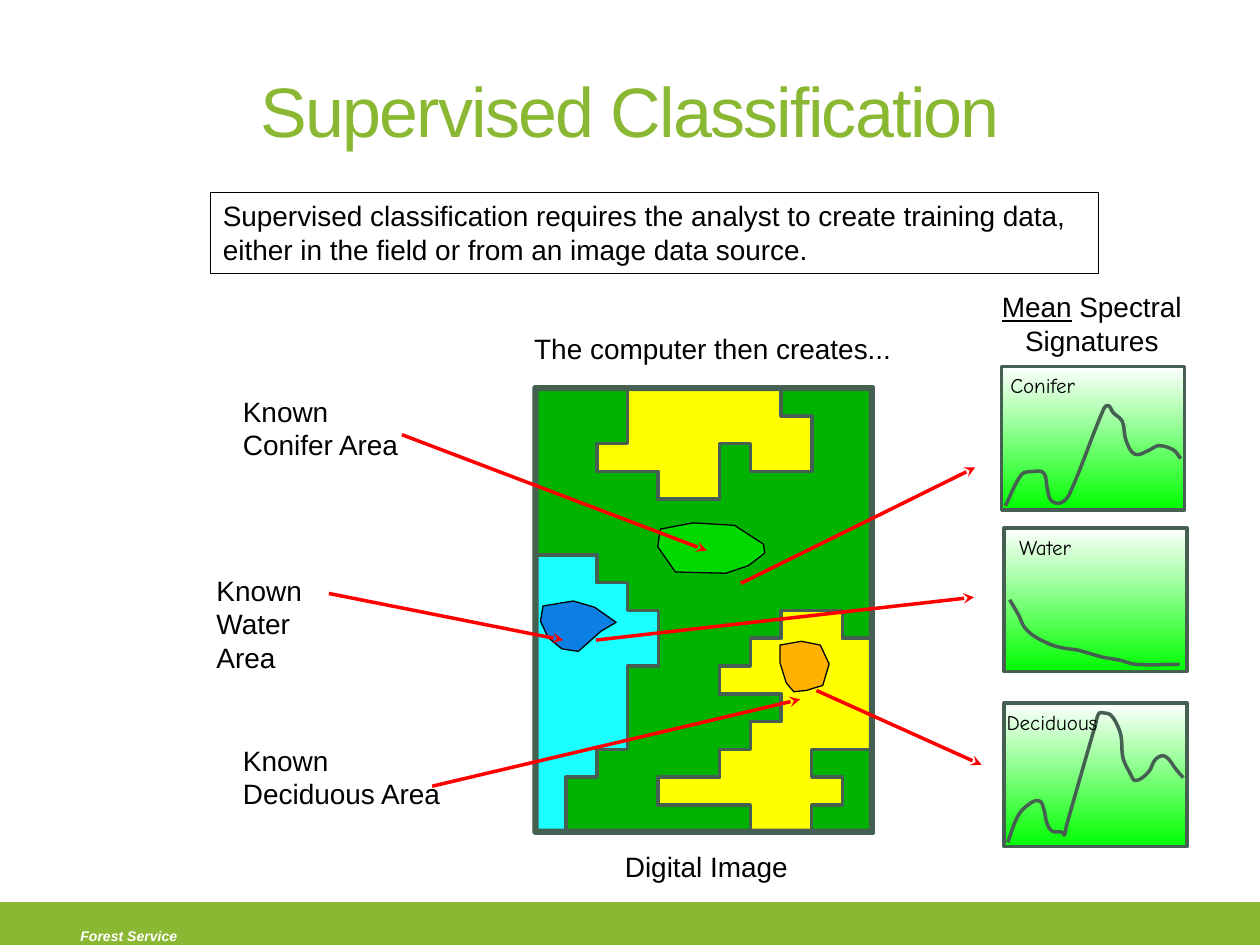
from dataclasses import dataclass
from math import dist

from lxml import etree
from pptx import Presentation
from pptx.dml.color import RGBColor
from pptx.enum.shapes import MSO_CONNECTOR, MSO_SHAPE
from pptx.enum.text import MSO_ANCHOR, PP_ALIGN
from pptx.oxml.ns import qn
from pptx.util import Emu, Inches, Pt

RECT, STRAIGHT = MSO_SHAPE.RECTANGLE, MSO_CONNECTOR.STRAIGHT
LEFT, CENTER = PP_ALIGN.LEFT, PP_ALIGN.CENTER
TOP, MIDDLE = MSO_ANCHOR.TOP, MSO_ANCHOR.MIDDLE
SLIDE_W, SLIDE_H = Inches(10), Inches(7.5)
UNIT = SLIDE_W / 100  # the slide is a grid of 100 columns by 75 rows


@dataclass(frozen=True)
class Theme:
    brand: str = "8AB833"
    edge: str = "455F51"
    ink: str = "000000"
    paper: str = "FFFFFF"
    arrow: str = "FF0000"
    forest: str = "00B300"
    water: str = "1AFFFF"
    leaf: str = "FFFF00"
    glow: str = "00FF00"
    font: str = "Arial"
    label_font: str = "Comic Neue"
    title: int = 40
    body: int = 16
    label: int = 12
    footer: int = 8
    thick: float = 2
    thin: float = 0.75


T = Theme()

# Land cover, as corners on an 11 by 16 cell raster
MAP = (42.5, 30.8, 26.8, 35.3)
MAP_COLS, MAP_ROWS = 11, 16
COVER = [
    (T.water, [(0, 6), (2, 6), (2, 7), (3, 7), (3, 8), (4, 8), (4, 10), (3, 10), (3, 13),
               (2, 13), (2, 14), (1, 14), (1, 16), (0, 16)]),
    (T.leaf, [(3, 0), (3, 2), (2, 2), (2, 3), (4, 3), (4, 4), (6, 4), (6, 2), (7, 2),
              (7, 3), (9, 3), (9, 1), (8, 1), (8, 0)]),
    (T.leaf, [(11, 9), (10, 9), (10, 8), (8, 8), (8, 9), (7, 9), (7, 10), (6, 10), (6, 11),
              (8, 11), (8, 12), (7, 12), (7, 13), (6, 13), (6, 14), (4, 14), (4, 15), (7, 15),
              (7, 16), (9, 16), (9, 15), (10, 15), (10, 14), (9, 14), (9, 13), (11, 13)]),
]
FRAME = [
    [(42.5, 65.9), (69.1, 65.9), (69.1, 30.9), (42.5, 30.9), (42.5, 30.7), (69.3, 30.7),
     (69.3, 66.1), (42.4, 66.1), (42.4, 66)],
    [(42.6, 30.8), (42.6, 66), (42.4, 66), (42.4, 30.7), (42.5, 30.7)],
]
# Training areas: colour, outline, label, label box, arrow start, arrow end
TRAINING = [
    ("FF6600", [(65.8, 52.7), (65.1, 51.2), (63.6, 50.9), (61.9, 51.2), (61.9, 52.6),
                (62.4, 54.2), (63, 54.9), (64, 54.8), (65.3, 54.4)],
     "Known Deciduous Area", (18.3, 58.5, 17.8, 6.4), (34.3, 62.4), (63.5, 55.5)),
    ("0000CC", [(48.9, 49.4), (47.2, 48.2), (45.5, 47.7), (43.1, 48.1), (42.9, 49.3),
                (43.5, 50.6), (44.6, 51.5), (45.9, 51.7), (47.7, 50.1)],
     "Known Water Area", (16.2, 45, 9.6, 9.1), (26.1, 47.1), (44.7, 50.8)),
    (T.glow, [(60.6, 43.2), (58.3, 41.7), (55, 41.5), (52.4, 42), (52.2, 43.4),
              (53.6, 45.4), (57.6, 45.5), (59.4, 44.9), (60.7, 43.9)],
     "Known Conifer Area", (18.3, 30.8, 15.3, 6.4), (31.9, 34.5), (56.1, 43.7)),
]
# Signatures: label, label left, panel left and top, curve in percent of the panel, arrow
PANEL_W, PANEL_H = 14.5, 11.4
SIGNATURES = [
    ("Water", 79.9, 79.7, 41.9,
     [(3, 50), (8, 61), (11, 69), (16, 75), (25, 81), (30, 83), (34, 84), (40, 85),
      (54, 90), (63, 92), (72, 95), (96, 95)], (47.3, 50.8), (77.3, 47.4)),
    ("Conifer", 79.2, 79.5, 29.1,
     [(2, 97), (11, 75), (17, 73), (23, 74), (25, 85), (27, 93), (32, 95), (37, 89),
      (55, 32), (58, 27), (61, 32), (66, 38), (68, 51), (73, 61), (81, 58), (86, 55),
      (94, 58), (98, 64)], (58.8, 46.3), (77.4, 37.1)),
    ("Deciduous", 78.9, 79.7, 55.8,
     [(2, 97), (7, 80), (12, 72), (19, 68), (22, 75), (23, 82), (26, 89), (32, 90),
      (33, 92), (34, 86), (50, 15), (52, 7), (55, 7), (58, 8), (61, 13), (64, 23),
      (65, 38), (69, 49), (72, 54), (79, 48), (83, 39), (88, 37), (94, 46), (98, 52)],
     (64.8, 54.8), (77.9, 60.7)),
]


def grid(*values):
    return [Emu(round(v * UNIT)) for v in values]


def style(shape, fill=None, line=T.edge, width=T.thick, alpha=None):
    shape.shadow.inherit = False
    if fill:
        shape.fill.solid()
        shape.fill.fore_color.rgb = RGBColor.from_string(fill)
    else:
        shape.fill.background()
    if alpha:
        color = shape.fill._xPr.find(qn("a:solidFill"))[0]
        etree.SubElement(color, qn("a:alpha")).set("val", str(alpha * 1000))
    shape.line.color.rgb = RGBColor.from_string(line)
    shape.line.width = Pt(width)


def write(shape, *runs, align=LEFT, anchor=TOP, wrap=True, inset=None, **base):
    """Fill a shape with one paragraph of (text, font values) runs."""
    tf = shape.text_frame
    tf.word_wrap, tf.vertical_anchor = wrap, anchor
    if inset is not None:
        for side in ("left", "top", "right", "bottom"):
            setattr(tf, f"margin_{side}", inset)
    p = tf.paragraphs[0]
    p.alignment = align
    for text, extra in runs:
        r = p.add_run()
        r.text = text
        values = {"name": T.font, "size": T.body, "color": T.ink, **base, **extra}
        r.font.color.rgb = RGBColor.from_string(values.pop("color"))
        values["size"] = Pt(values["size"])
        for name, value in values.items():
            setattr(r.font, name, value)


def add_text(s, box, *runs, **options):
    write(s.shapes.add_textbox(*grid(*box)), *runs, **options)


def add_rect(s, box, **look):
    shape = s.shapes.add_shape(RECT, *grid(*box))
    style(shape, **look)
    return shape


def add_outline(s, points, close=True, **look):
    points = [grid(*point) for point in points]
    builder = s.shapes.build_freeform(*points[0], scale=1.0)
    builder.add_line_segments(points[1:], close=close)
    shape = builder.convert_to_shape()
    style(shape, **look)
    return shape


def add_curve(s, points):
    """Draw an open outline and round its segments into Bezier curves."""
    shape = add_outline(s, points, close=False)
    nodes = list(shape._element.iter(qn("a:pt")))
    pts = [(int(n.get("x")), int(n.get("y"))) for n in nodes]

    def handle(i, reach):
        before, after = pts[max(i - 1, 0)], pts[min(i + 1, len(pts) - 1)]
        scale = reach / dist(before, after)
        return [pts[i][k] + (after[k] - before[k]) * scale for k in (0, 1)]

    for i, node in enumerate(nodes[1:], 1):
        segment = node.getparent()
        curve = etree.Element(qn("a:cubicBezTo"))
        reach = dist(pts[i - 1], pts[i]) / 3
        for x, y in (handle(i - 1, reach), handle(i, -reach), pts[i]):
            etree.SubElement(curve, qn("a:pt"), x=str(round(x)), y=str(round(y)))
        segment.getparent().replace(segment, curve)


def add_arrow(s, start, end):
    arrow = s.shapes.add_connector(STRAIGHT, *grid(*start, *end))
    arrow.line.color.rgb = RGBColor.from_string(T.arrow)
    arrow.line.width = Pt(T.thick)
    etree.SubElement(arrow.line._get_or_add_ln(), qn("a:tailEnd")).set("type", "stealth")
    etree.SubElement(arrow._element.spPr, qn("a:effectLst"))


def add_title(s, text):
    title = s.shapes.title
    title.left, title.top, title.width, title.height = grid(5, 3.3, 90, 10.8)
    write(title, (text, {}), align=CENTER, anchor=MIDDLE, size=T.title, color=T.brand)
    title.text_frame.paragraphs[0].runs[0].font._element.set("spc", "-100")


def add_map(s):
    left, top, width, height = MAP
    add_rect(s, MAP, fill=T.forest)
    for color, cells in COVER:
        corners = [(left + c * width / MAP_COLS, top + r * height / MAP_ROWS) for c, r in cells]
        add_outline(s, corners, fill=color)
    for edge in FRAME:
        add_outline(s, edge, fill=T.ink)


def add_training_area(s, color, outline, label, box, start, end):
    add_outline(s, outline, fill=color, line=T.ink, width=T.thin, alpha=50)
    add_text(s, box, (label, {}))
    add_arrow(s, start, end)


def add_signature(s, label, label_left, left, top, curve, start, end):
    panel = add_rect(s, (left, top, PANEL_W, PANEL_H))
    panel.fill.gradient()
    panel.fill.gradient_angle = 270
    for stop, position, color in zip(panel.fill.gradient_stops, (0, 1), (T.paper, T.glow)):
        stop.position = position
        stop.color.rgb = RGBColor.from_string(color)
    add_curve(s, [(left + x * PANEL_W / 100, top + y * PANEL_H / 100) for x, y in curve])
    add_text(s, (label_left, top, 12.3, 3), (label, {}), name=T.label_font, size=T.label)
    add_arrow(s, start, end)


def main():
    prs = Presentation()
    prs.slide_width, prs.slide_height = SLIDE_W, SLIDE_H
    s = prs.slides.add_slide(prs.slide_layouts[5])
    add_rect(s, (0, 71.7, 100, 3.6), fill=T.brand, line=T.brand)
    add_text(s, (5.4, 73.1, 20.4, 2.4), ("Forest Service", {}),
             size=T.footer, color=T.paper, bold=True, italic=True)
    add_title(s, "Supervised Classification")
    add_map(s)
    add_text(s, (49.6, 67.4, 13.1, 2.7), ("Digital Image", {}), wrap=False, inset=0)
    summary = add_rect(s, (16.7, 15.3, 70.5, 6.4), line=T.ink, width=T.thin)
    write(summary, ("Supervised classification requires the analyst to create training data, "
                    "either in the field or from an image data source.", {}))
    add_text(s, (42.4, 26.3, 28.7, 2.7), ("The computer then creates...", {}), wrap=False, inset=0)
    add_text(s, (77.2, 22.5, 18.9, 6.4), ("Mean", {"underline": True}),
             (" Spectral Signatures", {}), align=CENTER)
    for area in TRAINING:
        add_training_area(s, *area)
    for signature in SIGNATURES:
        add_signature(s, *signature)
    prs.save("out.pptx")


if __name__ == "__main__":
    main()
